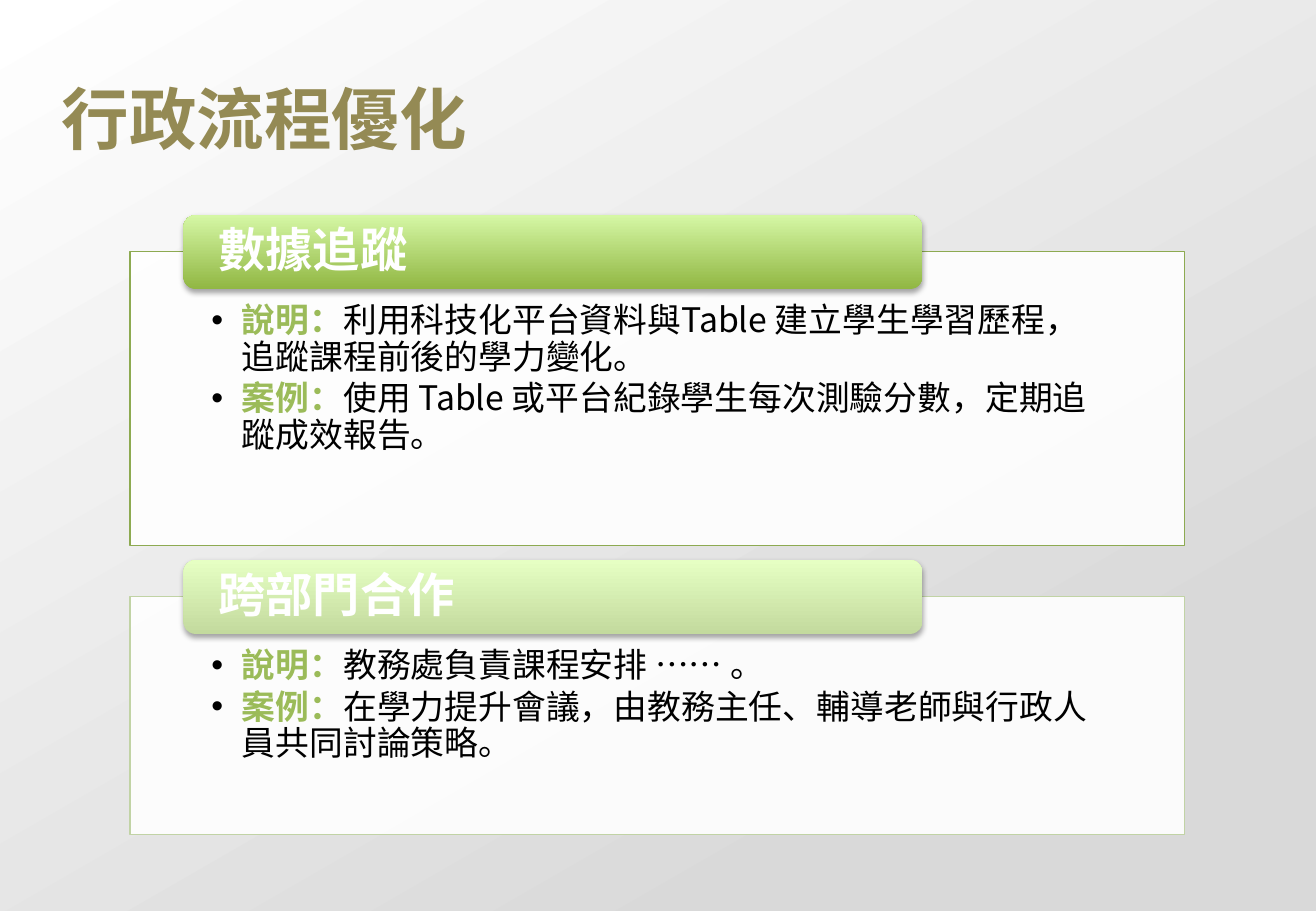
from dataclasses import dataclass

from lxml import etree
from pptx import Presentation
from pptx.dml.color import RGBColor
from pptx.enum.shapes import MSO_SHAPE
from pptx.enum.text import MSO_ANCHOR, MSO_AUTO_SIZE, PP_ALIGN
from pptx.oxml.ns import qn
from pptx.util import Pt

PX = 9144
ROUND = MSO_SHAPE.ROUNDED_RECTANGLE
TOP, MIDDLE = MSO_ANCHOR.TOP, MSO_ANCHOR.MIDDLE
LEFT = PP_ALIGN.LEFT
FIXED = MSO_AUTO_SIZE.NONE
TWO_LISTS = 3


@dataclass(frozen=True)
class Theme:
    face: str = "Noto Sans CJK SC"
    title: str = "948A54"
    label: str = "9BBB59"
    text: str = "000000"
    white: str = "FFFFFF"
    gray: str = "D9D9D9"
    title_size: int = 40
    head_size: int = 28
    body_size: int = 20


@dataclass(frozen=True)
class Panel:
    top: int
    height: int
    head: str
    line: str
    low: str
    high: str
    items: tuple[tuple[str, str], ...]


THEME = Theme()
PANELS = (
    Panel(207, 242, "數據追蹤", "8DAA51", "91B743", "D5F7A5", (
        ("說明：", "利用科技化平台資料與Table 建立學生學習歷程，追蹤課程前後的學力變化。"),
        ("案例：", "使用 Table 或平台紀錄學生每次測驗分數，定期追蹤成效報告。"),
    )),
    Panel(491, 196, "跨部門合作", "C1D3A5", "C3DA9E", "E6FFC3", (
        ("說明：", "教務處負責課程安排 …… 。"),
        ("案例：", "在學力提升會議，由教務主任、輔導老師與行政人員共同討論策略。"),
    )),
)


def apply(target, values: dict) -> None:
    for name, value in values.items():
        setattr(target, name, value)


def place(shape, left: int, top: int, width: int, height: int) -> None:
    apply(shape, {"left": left * PX, "top": top * PX,
                  "width": width * PX, "height": height * PX})


def frame(shape, anchor, side: int = 0, top: int = 0, bottom: int = 0):
    box = shape.text_frame
    apply(box, {"word_wrap": True, "auto_size": FIXED, "vertical_anchor": anchor,
                "margin_left": side * PX, "margin_right": side * PX,
                "margin_top": top * PX, "margin_bottom": bottom * PX})
    return box


def write(para, text: str, size: int, color: str, bold: bool) -> None:
    run = para.add_run()
    run.text = text
    apply(run.font, {"size": Pt(size), "bold": bold, "name": THEME.face})
    run.font.color.rgb = RGBColor.from_string(color)
    etree.SubElement(run.font._element, qn("a:ea"), typeface=THEME.face)


def blend(fill, first: str, last: str, angle: int, end: float = 1) -> None:
    fill.gradient()
    fill.gradient_angle = angle
    for stop, color, spot in zip(fill.gradient_stops, (first, last), (0, end)):
        stop.color.rgb = RGBColor.from_string(color)
        stop.position = spot


def bullet(para) -> None:
    props = para._p.get_or_add_pPr()
    props.set("marL", str(25 * PX))
    props.set("indent", str(-25 * PX))
    color = etree.SubElement(props, qn("a:buClr"))
    etree.SubElement(color, qn("a:srgbClr"), val=THEME.text)
    etree.SubElement(props, qn("a:buFont"), typeface="Arial")
    etree.SubElement(props, qn("a:buChar"), char="•")


def shade(shape) -> None:
    shape.shadow.inherit = False
    effects = shape._element.spPr.find(qn("a:effectLst"))
    outer = etree.SubElement(effects, qn("a:outerShdw"), blurRad=str(Pt(3.1)),
                             dist=str(Pt(1.8)), dir="5400000", rotWithShape="0")
    color = etree.SubElement(outer, qn("a:srgbClr"), val=THEME.text)
    etree.SubElement(color, qn("a:alpha"), val="35000")


def draw_list(body, panel: Panel) -> None:
    place(body, 107, panel.top, 868, panel.height)
    body.fill.solid()
    body.fill.fore_color.rgb = RGBColor.from_string(THEME.white)
    color = body._element.spPr.find(".//" + qn("a:srgbClr"))
    etree.SubElement(color, qn("a:alpha"), val="90000")
    body.line.color.rgb = RGBColor.from_string(panel.line)
    body.line.width = Pt(0.75)
    box = frame(body, TOP, 67, 43, 16)
    for i, (label, text) in enumerate(panel.items):
        para = box.add_paragraph() if i else box.paragraphs[0]
        bullet(para)
        apply(para, {"alignment": LEFT, "line_spacing": 0.9,
                     "space_before": Pt(0), "space_after": Pt(3)})
        write(para, label, THEME.body_size, THEME.label, True)
        write(para, text, THEME.body_size, THEME.text, False)


def draw_head(slide, panel: Panel) -> None:
    head = slide.shapes.add_shape(ROUND, 0, 0, 0, 0)
    place(head, 151, panel.top - 30, 608, 61)
    blend(head.fill, panel.low, panel.high, 90)
    head.line.fill.background()
    shade(head)
    para = frame(head, MIDDLE, 26).paragraphs[0]
    apply(para, {"alignment": LEFT, "line_spacing": 0.9})
    write(para, panel.head, THEME.head_size, THEME.white, True)


def main() -> None:
    deck = Presentation()
    apply(deck, {"slide_width": 1083 * PX, "slide_height": 750 * PX})
    slide = deck.slides.add_slide(deck.slide_layouts[TWO_LISTS])
    blend(slide.background.fill, THEME.white, THEME.gray, 300, 0.8)
    title = slide.shapes.title
    place(title, 51, 63, 1031, 67)
    para = frame(title, MIDDLE).paragraphs[0]
    para.alignment = LEFT
    write(para, "行政流程優化", THEME.title_size, THEME.title, True)
    for i, panel in enumerate(PANELS, 1):
        draw_list(slide.placeholders[i], panel)
        draw_head(slide, panel)
    deck.save("out.pptx")


if __name__ == "__main__":
    main()
